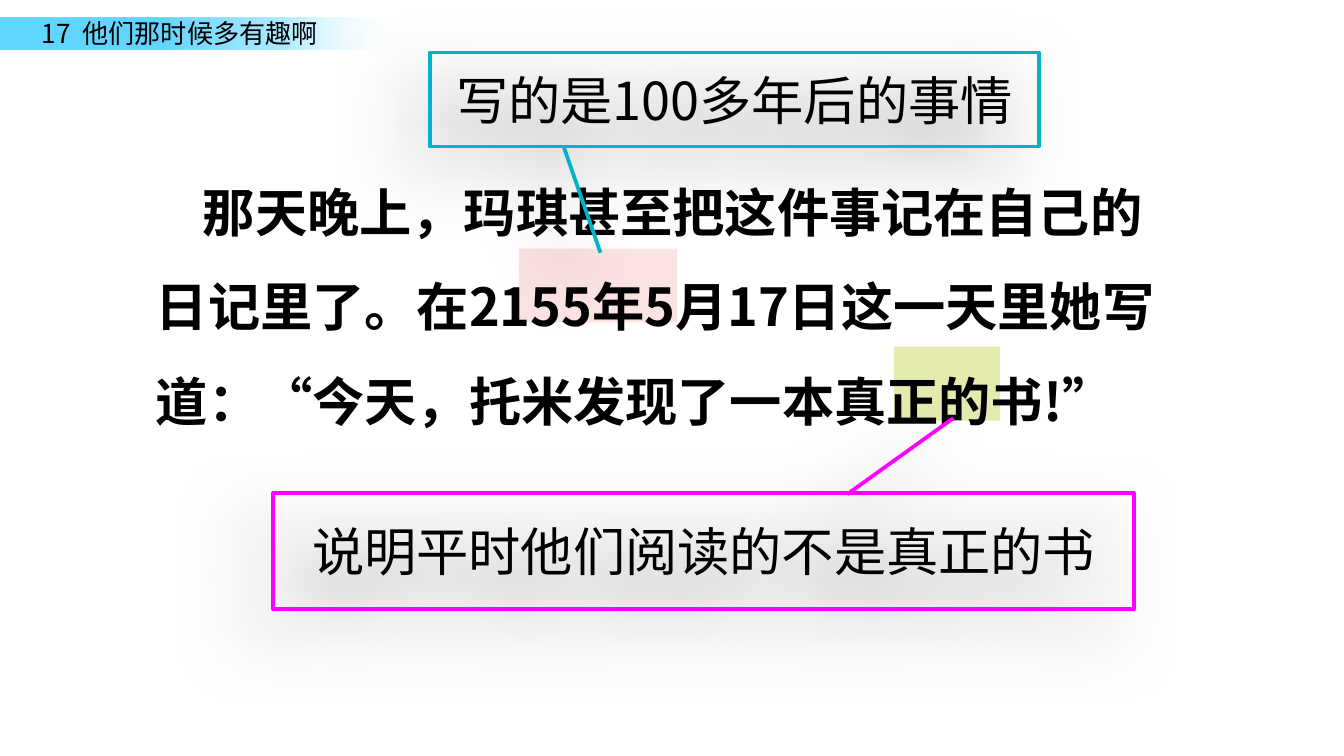
from lxml import etree
from pptx import Presentation
from pptx import util as u
from pptx.dml.color import RGBColor
from pptx.enum import shapes, text
from pptx.oxml import parse_xml
from pptx.oxml.ns import nsdecls, qn

BLACK = RGBColor(0, 0, 0)
LIME = RGBColor(0xE5, 0xEB, 0xAF)
PINK = RGBColor(0xFC, 0xE3, 0xE3)
TEAL = RGBColor(0x02, 0xB3, 0xC5)
MAGENTA = RGBColor(0xFF, 0x00, 0xFF)
FONT = "Noto Sans CJK SC"


def place(item, left, top, width, height):
    item.left, item.top = u.Inches(left), u.Inches(top)
    item.width, item.height = u.Inches(width), u.Inches(height)


def write(para, words, size, bold=False):
    run = para.add_run()
    run.text = words
    font = run.font
    font.name, font.size, font.bold = FONT, u.Pt(size), bold
    font.color.rgb = BLACK
    etree.SubElement(font._element, qn("a:ea")).set("typeface", FONT)


deck = Presentation()
deck.slide_width = u.Inches(10)
deck.slide_height = deck.slide_width * 9 // 16
slide = deck.slides.add_slide(deck.slide_layouts[1])
tree = slide.shapes
title, body = slide.placeholders

# Heading band, fading out to the right
band = tree.add_shape(shapes.MSO_SHAPE.RECTANGLE, 0, 0, 0, 0)
place(band, 0, 0.13, 3.03, 0.24)
band.shadow.inherit = False
band.line.fill.background()
band.fill.background()
stops = "".join(
    f'<a:gs pos="{pos}000"><a:srgbClr val="{tone}"><a:alpha val="{alpha}000"/></a:srgbClr></a:gs>'
    for pos, tone, alpha in [(40, "63D6FF", 100), (70, "97E4FF", 76), (97, "FFFFFF", 0)])
props = band._element.spPr
props.replace(props.find(qn("a:noFill")), parse_xml(
    f'<a:gradFill {nsdecls("a")}><a:gsLst>{stops}</a:gsLst><a:lin ang="0" scaled="0"/></a:gradFill>'))

# Heading
place(title, 0.21, 0.08, 2.36, 0.34)
tree._spTree.append(title._element)
frame = title.text_frame
frame.word_wrap = False
frame.auto_size = text.MSO_AUTO_SIZE.NONE
frame.vertical_anchor = text.MSO_ANCHOR.TOP
frame.paragraphs[0].alignment = text.PP_ALIGN.LEFT
write(frame.paragraphs[0], "17  他们那时候多有趣啊", 14)

# Highlights behind the passage
for tone, spot in [(LIME, (6.65, 2.58, 0.79, 0.55)), (PINK, (3.86, 1.85, 1.18, 0.55))]:
    mark = tree.add_shape(shapes.MSO_SHAPE.RECTANGLE, 0, 0, 0, 0)
    place(mark, *spot)
    mark.shadow.inherit = False
    mark.fill.solid()
    mark.fill.fore_color.rgb = tone
    mark.line.fill.background()

# Passage
place(body, 1.06, 1.06, 7.77, 2.22)
tree._spTree.append(body._element)
frame = body.text_frame
frame.word_wrap = True
frame.auto_size = text.MSO_AUTO_SIZE.NONE
para = frame.paragraphs[0]
para.line_spacing = 1.5
para.space_before = u.Pt(0)
rule = para._p.get_or_add_pPr()
rule.set("marL", "0")
rule.set("indent", str(u.Inches(0.35)))
etree.SubElement(rule, qn("a:buNone"))
write(para, "那天晚上，玛琪甚至把这件事记在自己的日记里了。在2155年5月17日这一天里"
      "她写道：“今天，托米发现了一本真正的书!”", 28, True)

# Callouts: pointer ends are (y, x) shares of the box
notes = [
    ("写的是100多年后的事情", TEAL, (3.2, 0.39, 4.53, 0.7), (2.13, 0.28, 1.01, 0.22)),
    ("说明平时他们阅读的不是真正的书", MAGENTA, (2.03, 3.67, 6.41, 0.86), (0.01, 2 / 3, -0.65, 0.79)),
]
for words, tone, spot, ends in notes:
    note = tree.add_shape(shapes.MSO_SHAPE.LINE_CALLOUT_1, 0, 0, 0, 0)
    place(note, *spot)
    for i, end in enumerate(ends):
        note.adjustments[i] = end
    note.fill.background()
    note.line.color.rgb = tone
    note.line.width = u.Pt(2)
    note._element.spPr.append(parse_xml(
        f'<a:effectLst {nsdecls("a")}><a:outerShdw blurRad="{u.Pt(35)}" dist="{u.Pt(20)}" '
        f'dir="{135 * 60000}" algn="tr" rotWithShape="0"><a:srgbClr val="000000">'
        '<a:alpha val="50000"/></a:srgbClr></a:outerShdw></a:effectLst>'))
    frame = note.text_frame
    frame.word_wrap = True
    frame.vertical_anchor = text.MSO_ANCHOR.MIDDLE
    frame.paragraphs[0].alignment = text.PP_ALIGN.CENTER
    write(frame.paragraphs[0], words, 28)

deck.save("out.pptx")
